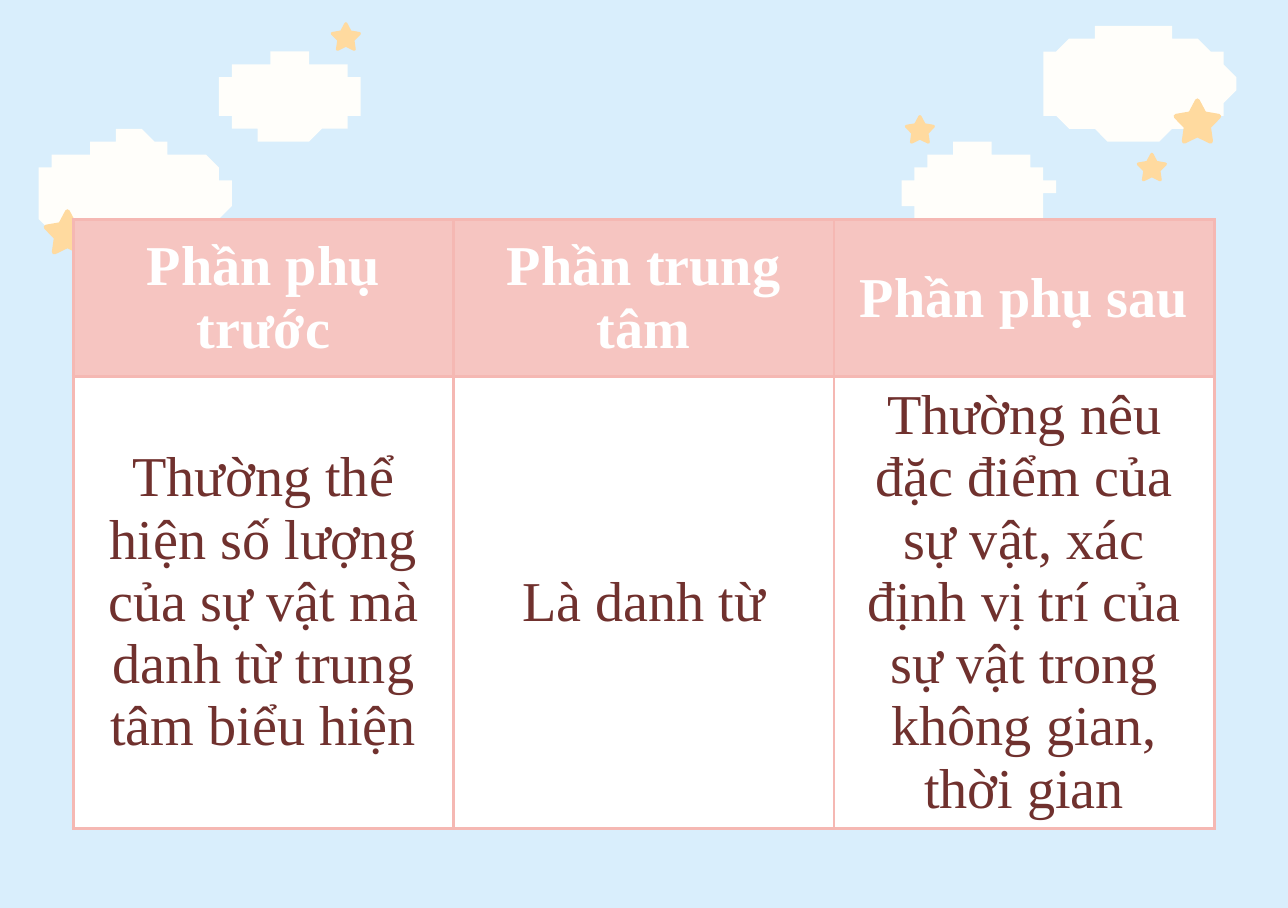
"""Build a slide with a three-part phrase table on a sky of clouds and stars."""
import math
from dataclasses import dataclass

import lxml.etree
import pptx
import pptx.dml.color
import pptx.enum.shapes
import pptx.enum.text
import pptx.oxml
import pptx.oxml.ns
import pptx.util


@dataclass(frozen=True)
class Theme:
    sky: str = "D9EEFC"
    cloud: str = "FFFEFA"
    star: str = "FFDA9F"
    header: str = "F6C5C1"
    border: str = "F5B8B3"
    header_text: str = "FFFFFF"
    body: str = "FFFFFF"
    body_text: str = "70312E"
    font: str = "Times New Roman"
    size: int = 26
    border_width: float = 1.5


def paint(fill, color):
    fill.solid()
    fill.fore_color.rgb = pptx.dml.color.RGBColor.from_string(color)


def cloud_radius(angle):
    middle, side, offset = 0.63, 0.43, 0.57
    across = abs(math.cos(angle)) * offset
    reach = side ** 2 - (math.sin(angle) * offset) ** 2
    return max(middle, across + math.sqrt(reach)) if reach > 0 else middle


theme = Theme()
deck = pptx.Presentation()
deck.slide_width = pptx.util.Inches(8.27)
deck.slide_height = pptx.util.Inches(5.83)
percent = deck.slide_width / 100
slide = deck.slides.add_slide(deck.slide_layouts[6])
paint(slide.background.fill, theme.sky)

clouds = [(88.09, 6.47, 15.1), (75.88, 14.75, 11.3),
          (10.2, 15.05, 15.1), (22.43, 7.6, 11.3)]
for center_x, center_y, width in clouds:
    outline = []
    for degree in range(0, 360, 3):
        angle = math.radians(degree)
        radius = cloud_radius(angle) * width / 2
        outline.append((center_x + radius * math.cos(angle),
                        center_y + radius * math.sin(angle)))
    builder = slide.shapes.build_freeform(*outline[0], scale=percent)
    builder.add_line_segments(outline[1:], close=True)
    cloud = builder.convert_to_shape()
    cloud.shadow.inherit = False
    paint(cloud.fill, theme.cloud)
    cloud.line.fill.background()

stars = [(92.97, 9.4, 3.7), (89.44, 12.97, 2.35), (71.43, 10.05, 2.35),
         (5.24, 18, 3.7), (8.89, 21.5, 2.35), (26.86, 2.84, 2.35)]
for center_x, center_y, width in stars:
    inner_width, inner_height = width * 0.9, width * 0.85
    star = slide.shapes.add_shape(
        pptx.enum.shapes.MSO_SHAPE.STAR_5_POINT,
        round((center_x - inner_width / 2) * percent),
        round((center_y - inner_height / 2) * percent),
        round(inner_width * percent), round(inner_height * percent))
    star.adjustments[0] = 0.26
    star.shadow.inherit = False
    paint(star.fill, theme.star)
    paint(star.line.fill, theme.star)
    star.line.width = round(width * 0.1 * percent)
    lxml.etree.SubElement(star.line.fill._xPr, pptx.oxml.ns.qn("a:round"))

phrase_parts = [
    ("Phần phụ trước", "Phần trung tâm", "Phần phụ sau"),
    ("Thường thể hiện số lượng của sự vật mà danh từ trung tâm biểu hiện",
     "Là danh từ",
     "Thường nêu đặc điểm của sự vật, xác định vị trí của sự vật "
     "trong không gian, thời gian"),
]
column_width, row_heights = 29.54, (12.19, 35.06)
phrase_table = slide.shapes.add_table(
    2, 3, round(5.68 * percent), round(17.05 * percent),
    round(3 * column_width * percent), round(sum(row_heights) * percent)).table
for column in phrase_table.columns:
    column.width = round(column_width * percent)

for row_index, row_texts in enumerate(phrase_parts):
    phrase_table.rows[row_index].height = round(row_heights[row_index] * percent)
    is_header = row_index == 0
    for column_index, wording in enumerate(row_texts):
        cell = phrase_table.cell(row_index, column_index)
        cell.text = wording
        cell.vertical_anchor = pptx.enum.text.MSO_ANCHOR.MIDDLE
        paint(cell.fill, theme.header if is_header else theme.body)
        paragraph = cell.text_frame.paragraphs[0]
        paragraph.alignment = pptx.enum.text.PP_ALIGN.CENTER
        paragraph.font.name = theme.font
        paragraph.font.size = pptx.util.Pt(theme.size)
        paragraph.font.bold = is_header
        paint(paragraph.font.fill,
              theme.header_text if is_header else theme.body_text)
        properties = cell._tc.get_or_add_tcPr()
        for position, side in enumerate(("lnL", "lnR", "lnT", "lnB")):
            properties.insert(position, pptx.oxml.parse_xml(
                f'<a:{side} {pptx.oxml.ns.nsdecls("a")} '
                f'w="{pptx.util.Pt(theme.border_width)}"><a:solidFill>'
                f'<a:srgbClr val="{theme.border}"/></a:solidFill></a:{side}>'))

deck.save("out.pptx")
